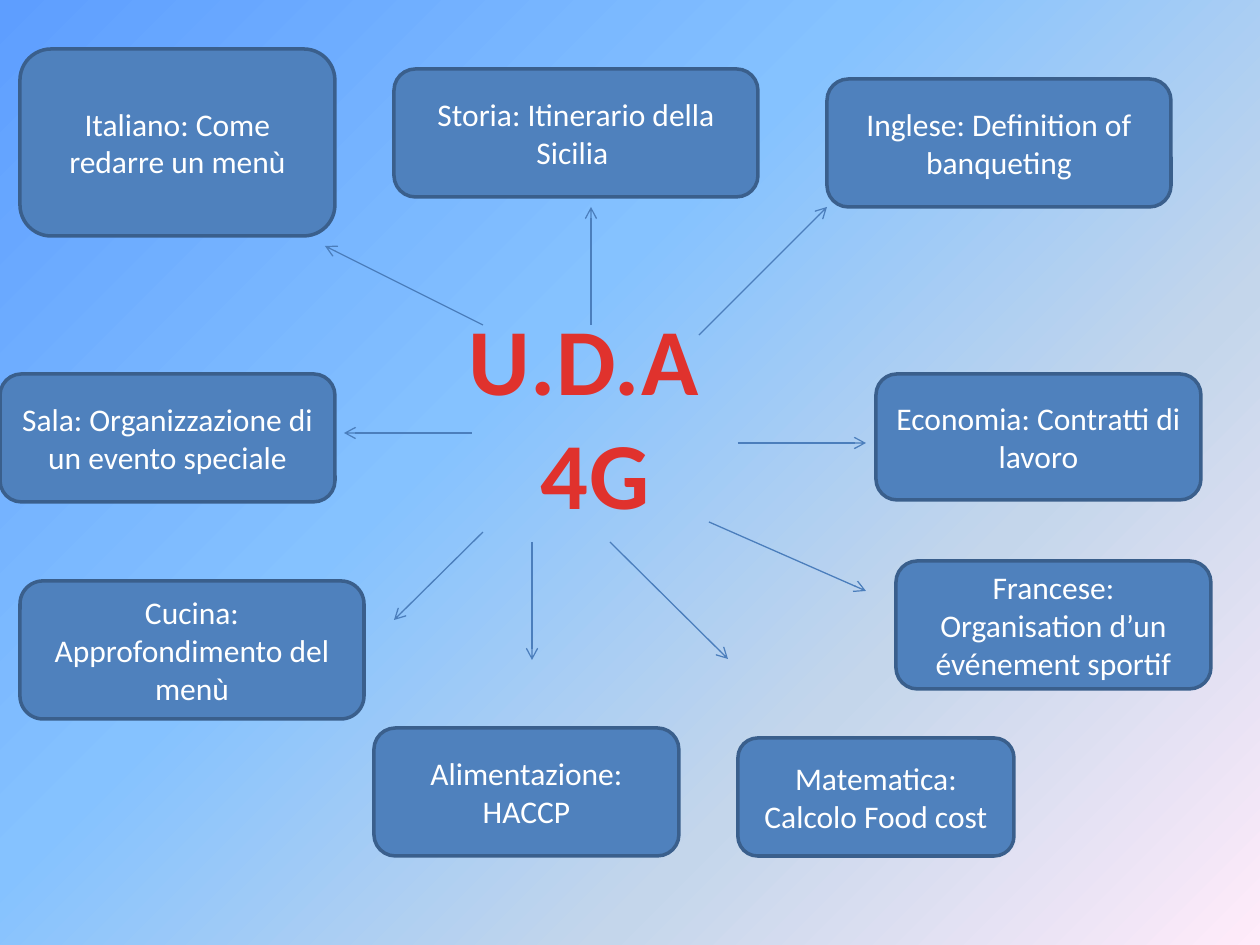
from typing import NamedTuple

from lxml.etree import SubElement
from pptx import Presentation
from pptx.dml.color import RGBColor as Rgb
from pptx.enum.shapes import MSO_CONNECTOR as Link, MSO_SHAPE as Shape
from pptx.enum.text import MSO_ANCHOR as Anchor, MSO_AUTO_SIZE as Fit, PP_ALIGN as Align
from pptx.oxml.ns import qn
from pptx.util import Emu, Pt

SCALE = 914400 / 126  # EMU in one px
FONT = "Calibri"
COLORS = {"box": "4F81BD", "edge": "3A5F8C", "arrow": "4B7EBC", "text": "FFFFFF"}
SKY = {0: "5E9EFF", 40: "85C2FF", 70: "C4D6EB", 100: "FFEBFA"}
RED = {25: "E0322D", 100: "A2201C"}


class Topic(NamedTuple):
    text: str
    left: int
    top: int
    width: int
    height: int
    start: tuple[int, int]
    end: tuple[int, int]


TOPICS = [
    Topic("Italiano: Come redarre un menù", 20, 49, 315, 187, (483, 325), (325, 246)),
    Topic("Storia: Itinerario della Sicilia ", 394, 69, 364, 128, (591, 325), (591, 207)),
    Topic("Inglese: Definition of banqueting", 827, 79, 344, 128, (699, 335), (827, 207)),
    Topic("Sala: Organizzazione di un evento speciale", 0, 374, 335, 128, (472, 433), (344, 433)),
    Topic("Economia: Contratti di lavoro", 876, 374, 325, 126, (738, 443), (866, 443)),
    Topic("Cucina: Approfondimento del menù", 20, 581, 344, 138, (483, 532), (394, 620)),
    Topic("Alimentazione: HACCP", 374, 728, 305, 128, (532, 542), (532, 660)),
    Topic("Matematica: Calcolo Food cost", 738, 738, 276, 118, (610, 542), (728, 659)),
    Topic("Francese: Organisation d’un événement sportif", 896, 561, 315, 128, (709, 522), (866, 591)),
]


def px(*sizes: int) -> list[Emu]:
    return [Emu(round(size * SCALE)) for size in sizes]


def color(name: str) -> Rgb:
    return Rgb.from_string(COLORS[name])


def blend(fill, root, stops: dict[int, str], angle: int) -> None:
    """Give the fill found under root a gradient with any number of stops."""
    fill.gradient()
    fill.gradient_angle = angle
    group = next(root.iter(qn("a:gsLst")))
    for old in list(group):
        group.remove(old)
    for place, tone in stops.items():
        stop = SubElement(group, qn("a:gs"), pos=str(place * 1000))
        SubElement(stop, qn("a:srgbClr"), val=tone)


def add_run(para, text: str, size: int):
    para.alignment = Align.CENTER
    run = para.add_run()
    run.text = text
    run.font.name = FONT
    run.font.size = Pt(size)
    return run


def draw_title(slide) -> None:
    frame = slide.shapes.add_textbox(*px(413, 295, 364, 187)).text_frame
    frame.word_wrap = True
    frame.auto_size = Fit.SHAPE_TO_FIT_TEXT
    for para, text in ((frame.paragraphs[0], "U.D.A "), (frame.add_paragraph(), "4G")):
        run = add_run(para, text, 54)
        run.font.bold = True
        props = run.font._element
        props.set("spc", "50")
        blend(run.font.fill, props, RED, 270)


def draw_arrow(slide, topic: Topic) -> None:
    arrow = slide.shapes.add_connector(Link.STRAIGHT, *px(*topic.start, *topic.end))
    arrow.line.color.rgb = color("arrow")
    arrow.line.width = Pt(0.75)
    SubElement(arrow.line._get_or_add_ln(), qn("a:tailEnd"), type="arrow")
    SubElement(arrow.element.spPr, qn("a:effectLst"))


def draw_box(slide, topic: Topic) -> None:
    box = slide.shapes.add_shape(
        Shape.ROUNDED_RECTANGLE, *px(topic.left, topic.top, topic.width, topic.height))
    box.shadow.inherit = False
    box.fill.solid()
    box.fill.fore_color.rgb = color("box")
    box.line.color.rgb = color("edge")
    box.line.width = Pt(2)
    frame = box.text_frame
    frame.word_wrap = True
    frame.vertical_anchor = Anchor.MIDDLE
    run = add_run(frame.paragraphs[0], topic.text, 18)
    run.font.color.rgb = color("text")


def main() -> None:
    deck = Presentation()
    deck.slide_width, deck.slide_height = px(1260, 945)
    slide = deck.slides.add_slide(deck.slide_layouts[6])
    blend(slide.background.fill, slide.element, SKY, 315)
    draw_title(slide)
    for topic in TOPICS:
        draw_arrow(slide, topic)
        draw_box(slide, topic)
    deck.save("out.pptx")


if __name__ == "__main__":
    main()
